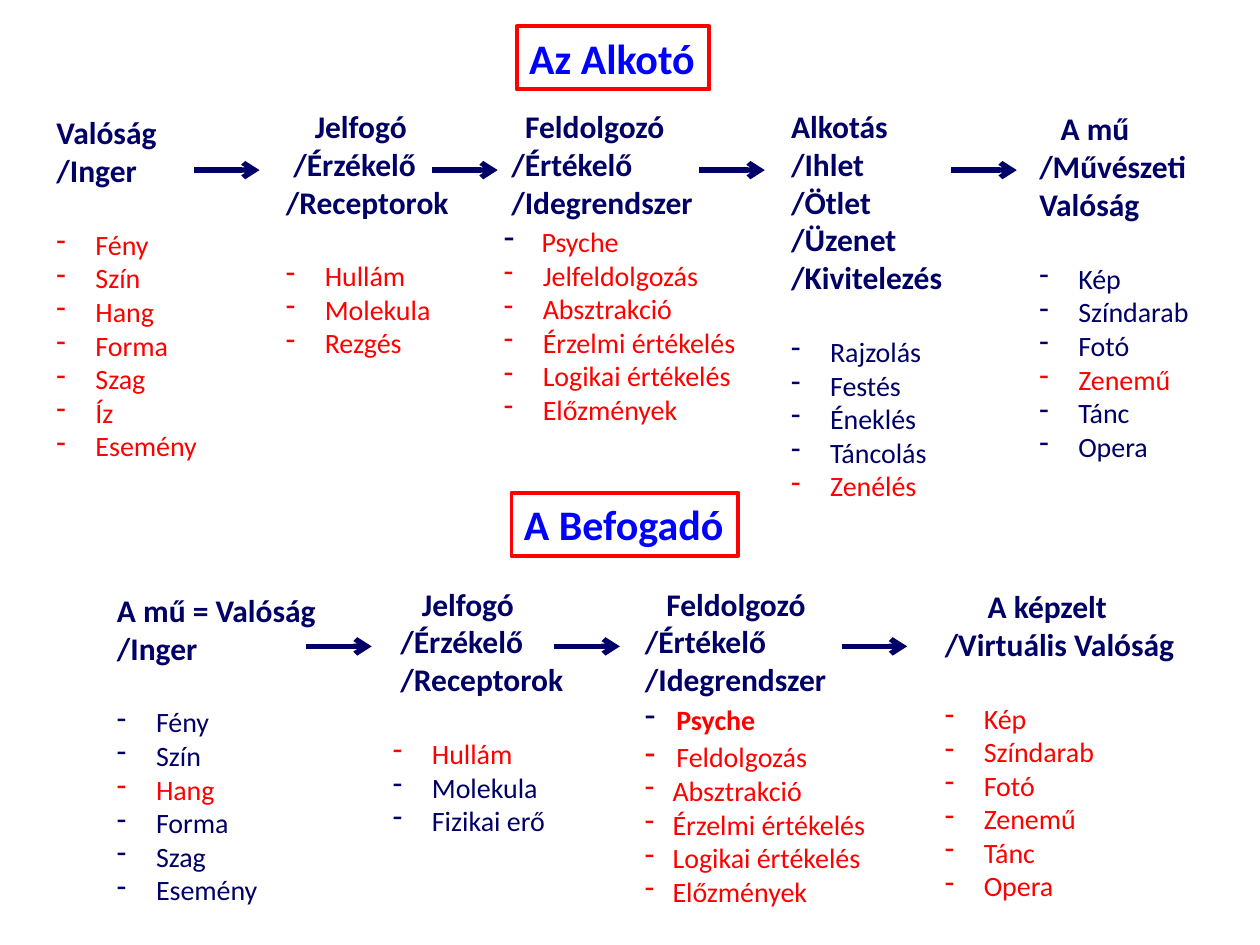
"""Build a slide on how the maker and the receiver of art perceive."""
from dataclasses import dataclass
from typing import Optional

import pptx
import pptx.dml.color
import pptx.enum.shapes
import pptx.enum.text
import pptx.oxml
import pptx.oxml.ns
import pptx.util
from pptx.util import Inches, Pt

NAVY = pptx.dml.color.RGBColor(0x00, 0x00, 0x66)
RED = pptx.dml.color.RGBColor(0xFF, 0x00, 0x00)
BLUE = pptx.dml.color.RGBColor(0x00, 0x00, 0xFF)
FONT = "Calibri"
NS = pptx.oxml.ns.nsdecls("a")


@dataclass(frozen=True)
class Head:
    text: str
    pad: float = 0


@dataclass(frozen=True)
class Item:
    text: str
    color: pptx.dml.color.RGBColor = RED
    hang: float = 0.31
    gap: float = 0
    bold: bool = False
    dash: Optional[pptx.dml.color.RGBColor] = None
    scale: int = 100


@dataclass(frozen=True)
class Column:
    left: float
    top: float
    width: float
    height: float
    heads: tuple
    items: tuple
    gap: float = 22


@dataclass(frozen=True)
class Arrow:
    left: float
    top: float


def pick(color, names: str, hang: float = 0.31) -> tuple:
    return tuple(Item(name, color, hang) for name in names.split(", "))


COLUMNS = (
    Column(0.35, 0.85, 1.33, 2.89, (Head("Valóság"), Head("/Inger")),
           pick(RED, "Fény, Szín, Hang, Forma, Szag, Íz, Esemény")),
    Column(2.17, 0.8, 1.5, 2.83,
           (Head("Jelfogó", 0.23), Head("/Érzékelő", 0.06), Head("/Receptorok")),
           pick(RED, "Hullám, Molekula, Rezgés")),
    Column(3.9, 0.8, 2.07, 2.66,
           (Head("Feldolgozó", 0.17), Head("/Értékelő", 0.06),
            Head("/Idegrendszer", 0.06)),
           (Item("Psyche", hang=0.3, dash=NAVY, scale=112),)
           + pick(RED, "Jelfeldolgozás, Absztrakció, Érzelmi értékelés, "
                       "Logikai értékelés, Előzmények"), 2.4),
    Column(6.18, 0.8, 1.41, 3.53,
           (Head("Alkotás"), Head("/Ihlet"), Head("/Ötlet"), Head("/Üzenet"),
            Head("/Kivitelezés")),
           pick(NAVY, "Rajzolás, Festés, Éneklés, Táncolás") + pick(RED, "Zenélés")),
    Column(8.15, 0.82, 1.4, 3.53,
           (Head("A mű", 0.17), Head("/Művészeti"), Head("Valóság")),
           pick(NAVY, "Kép, Színdarab, Fotó") + pick(RED, "Zenemű")
           + pick(NAVY, "Tánc, Opera")),
    Column(0.83, 4.64, 1.79, 2.63, (Head("A mű = Valóság"), Head("/Inger")),
           pick(NAVY, "Fény, Szín") + pick(RED, "Hang")
           + pick(NAVY, "Forma, Szag, Esemény")),
    Column(3.02, 4.59, 1.56, 2.42,
           (Head("Jelfogó", 0.23), Head("/Érzékelő", 0.06),
            Head("/Receptorok", 0.06)),
           pick(RED, "Hullám") + pick(NAVY, "Molekula, Fizikai erő")),
    Column(5.02, 4.59, 1.97, 2.69,
           (Head("Feldolgozó", 0.17), Head("/Értékelő"), Head("/Idegrendszer")),
           (Item("Psyche", hang=0.25, bold=True, dash=NAVY, scale=112),
            Item("Feldolgozás", hang=0.25, gap=2.4, scale=112))
           + pick(RED, "Absztrakció, Érzelmi értékelés, Logikai értékelés, "
                       "Előzmények", 0.22), 2.4),
    Column(7.4, 4.61, 2.04, 3.23,
           (Head("A képzelt", 0.34), Head("/Virtuális Valóság")),
           pick(RED, "Kép, Színdarab, Fotó, Zenemű, Tánc, Opera")),
)
ARROWS = (tuple(Arrow(left, 1.35) for left in (1.54, 3.43, 5.55, 7.55))
          + tuple(Arrow(left, 5.13) for left in (2.43, 4.4, 6.68)))


def add_run(para, text: str, size: float, color, bold: bool) -> None:
    run = para.add_run()
    run.text = text
    run.font.name = FONT
    run.font.size = Pt(size)
    run.font.bold = bold
    run.font.color.rgb = color


def set_dash(para, item: Item) -> None:
    props = para._p.get_or_add_pPr()
    props.set("marL", str(Inches(item.hang)))
    props.set("indent", str(-Inches(item.hang)))
    marks = (f'<a:buClr {NS}><a:srgbClr val="{item.dash or item.color}"/></a:buClr>',
             f'<a:buSzPct {NS} val="{item.scale * 1000}"/>',
             f'<a:buFontTx {NS}/>',
             f'<a:buChar {NS} char="-"/>')
    for mark in marks:
        props.append(pptx.oxml.parse_xml(mark))


def draw_column(slide, col: Column) -> None:
    box = slide.shapes.add_textbox(Inches(col.left), Inches(col.top),
                                   Inches(col.width), Inches(col.height))
    frame = box.text_frame
    frame.word_wrap = True
    frame.margin_right = 0
    lines = col.heads + col.items
    for spot, line in enumerate(lines):
        para = frame.add_paragraph() if spot else frame.paragraphs[0]
        if isinstance(line, Head):
            para._p.get_or_add_pPr().set("marL", str(Inches(line.pad)))
            add_run(para, line.text, 18, NAVY, True)
        else:
            first = spot == len(col.heads)
            para.space_before = Pt(col.gap if first else line.gap)
            set_dash(para, line)
            add_run(para, line.text, 16, line.color, line.bold)


def draw_title(box, text: str, left: float, top: float, width: float) -> None:
    box.left, box.top = Inches(left), Inches(top)
    box.width, box.height = Inches(width), Inches(0.5)
    box.fill.background()
    box.line.color.rgb = RED
    box.line.width = Pt(2.25)
    frame = box.text_frame
    frame.word_wrap = True
    frame.margin_right = 0
    frame.auto_size = pptx.enum.text.MSO_AUTO_SIZE.NONE
    frame.vertical_anchor = pptx.enum.text.MSO_ANCHOR.TOP
    para = frame.paragraphs[0]
    para.alignment = pptx.enum.text.PP_ALIGN.LEFT
    add_run(para, text, 24, BLUE, True)


def draw_arrow(slide, arrow: Arrow) -> None:
    line = slide.shapes.add_connector(
        pptx.enum.shapes.MSO_CONNECTOR.STRAIGHT, Inches(arrow.left),
        Inches(arrow.top), Inches(arrow.left + 0.52), Inches(arrow.top))
    line.line.color.rgb = NAVY
    line.line.width = Pt(3)
    line.line._get_or_add_ln().append(
        pptx.oxml.parse_xml(f'<a:tailEnd {NS} type="arrow"/>'))
    line._element.spPr.append(pptx.oxml.parse_xml(f"<a:effectLst {NS}/>"))


def main() -> None:
    deck = pptx.Presentation()
    deck.slide_width, deck.slide_height = Inches(10), Inches(7.5)
    slide = deck.slides.add_slide(deck.slide_layouts[5])
    draw_title(slide.shapes.title, "Az Alkotó", 4.1, 0.21, 1.53)
    for col in COLUMNS:
        draw_column(slide, col)
    box = slide.shapes.add_shape(pptx.enum.shapes.MSO_SHAPE.RECTANGLE, 0, 0, 0, 0)
    box.shadow.inherit = False
    draw_title(box, "A Befogadó", 4.06, 3.91, 1.8)
    for arrow in ARROWS:
        draw_arrow(slide, arrow)
    deck.save("out.pptx")


if __name__ == "__main__":
    main()
